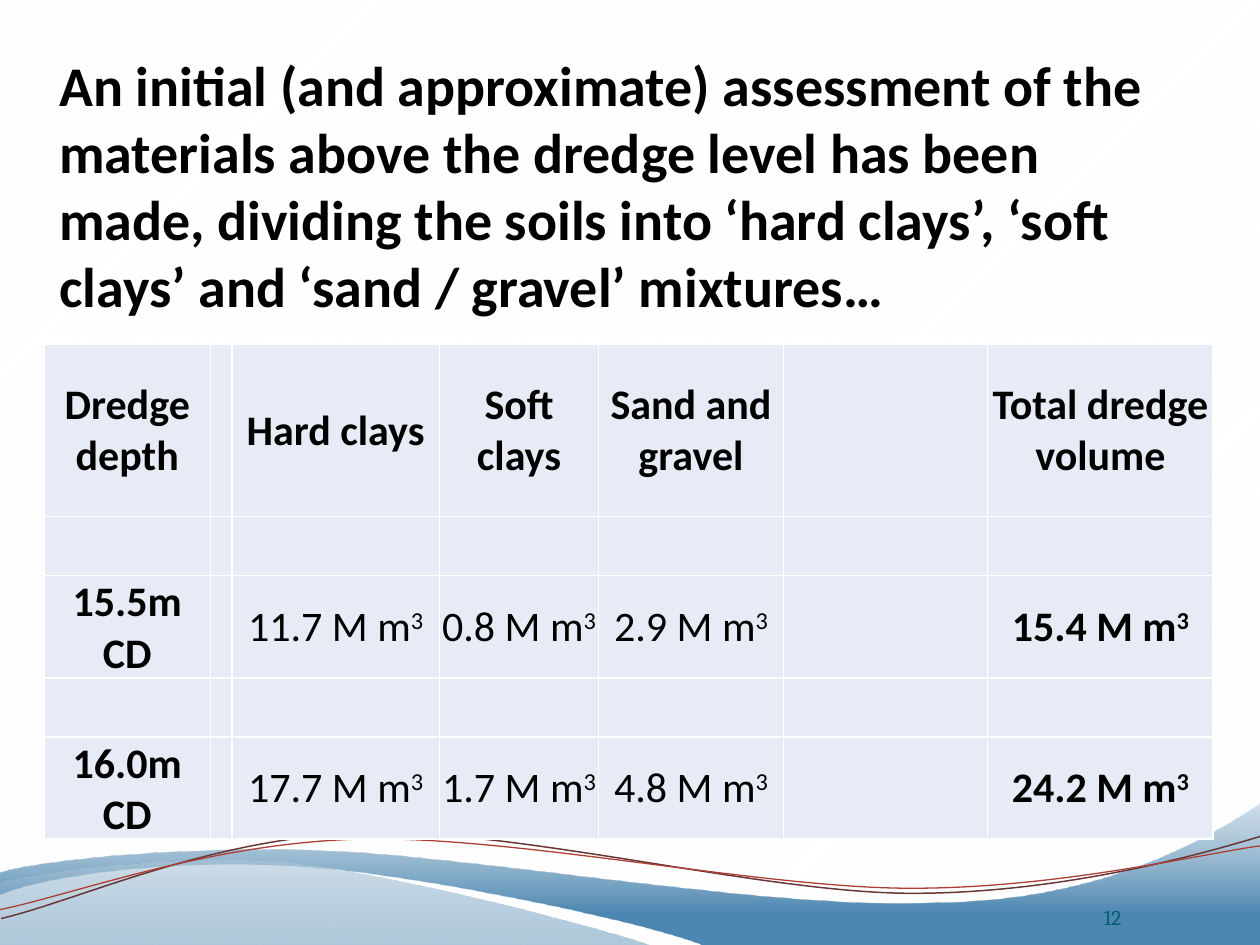
from dataclasses import dataclass
from typing import NamedTuple

from lxml.etree import Element, SubElement
from pptx import Presentation
from pptx.dml.color import RGBColor
from pptx.enum.dml import MSO_PATTERN
from pptx.enum.text import MSO_ANCHOR, PP_ALIGN
from pptx.oxml.ns import qn
from pptx.util import Inches, Pt


class Box(NamedTuple):
    """A region of the slide in inches."""
    left: float
    top: float
    width: float
    height: float

    def lengths(self):
        """Return the four sides as lengths."""
        return [Inches(side) for side in self]


@dataclass(frozen=True)
class Theme:
    """Colours, fonts and type sizes of the slide."""
    text: str = "000000"
    number: str = "045D75"
    cell: str = "E7EBF5"
    border: str = "FFFFFF"
    paper: str = "FFFFFF"
    stripe: str = "F9F9F9"
    wave_dark: str = "4C87B1"
    wave_light: str = "ACC5D8"
    brown: str = "683738"
    red: str = "AD3E34"
    body_font: str = "Calibri"
    number_font: str = "Cambria"
    title_size: int = 32
    table_size: int = 24
    number_size: int = 12


THEME = Theme()

BACK_WAVE = [
    (10, 1.21), (5.6, 1.21),
    (5.24, 1.04, 3.35, 0.64, 2.42, 0.58), (1.48, 0.51, 0.42, 0.63, 0, 0.8),
    (0, 0.71, -0.01, 0.72, -0.01, 0.63), (0.17, 0.55, 1.3, 0.41, 2.54, 0.45),
    (3.78, 0.49, 6.18, 0.93, 7.43, 0.86), (8.71, 0.85, 9.54, 0.38, 10.01, 0.07),
    (10.01, 0.45, 10, 0.83, 10, 1.21),
]
FRONT_WAVE = [
    (5.2, 1.21), (4.89, 1.09, 3.17, 0.63, 2.3, 0.55),
    (1.43, 0.47, 0.36, 0.61, -0.02, 0.71), (-0.02, 0.88, -0.01, 1.04, -0.01, 1.21),
    (5.2, 1.21),
]
BROWN_LINE = [
    (10.03, 0.33), (9.54, 0.48, 8.43, 0.79, 7.24, 0.79),
    (6.05, 0.79, 4.1, 0.27, 2.89, 0.31), (1.69, 0.34, 0.61, 0.85, 0.01, 0.99),
]
RED_LINE = [
    (10.03, 0.41), (9.56, 0.47, 8.38, 0.76, 7.18, 0.75),
    (5.99, 0.74, 4.05, 0.33, 2.86, 0.36), (1.66, 0.39, 0.59, 0.8, 0, 0.92),
]

TITLE = (
    "An initial (and approximate) assessment of the materials above the dredge "
    "level has been made, dividing the soils into ‘hard clays’, ‘soft clays’ "
    "and ‘sand / gravel’ mixtures…"
)
COLUMN_WIDTHS = [1.32, 0.17, 1.65, 1.26, 1.47, 1.62, 1.79]
ROW_HEIGHTS = [1.37] + [0.47] * 4
VOLUME_UNIT = " M m"
VOLUME_COLUMNS = (2, 3, 4, 6)
DREDGE_ROWS = {
    0: ["Dredge depth", "", "Hard clays", "Soft clays", "Sand and gravel", "", "Total dredge volume"],
    2: ["15.5m CD", "", "11.7", "0.8", "2.9", "", "15.4"],
    4: ["16.0m CD", "", "17.7", "1.7", "4.8", "", "24.2"],
}


def add_run(paragraph, text, size, color, font_name, bold=False):
    """Append a formatted run and return it."""
    run = paragraph.add_run()
    run.text = text
    run.font.name, run.font.size, run.font.bold = font_name, Pt(size), bold
    run.font.color.rgb = RGBColor.from_string(color)
    return run


def add_curve(shapes, box, segments, closed):
    """Draw straight and cubic segments measured from the box corner."""
    def place(x, y):
        """Return a point of the box as slide lengths."""
        return Inches(box.left + x), Inches(box.top + y)

    points = [place(*segment[-2:]) for segment in segments]
    builder = shapes.build_freeform(*points[0])
    builder.add_line_segments(points[1:], close=closed)
    shape = builder.convert_to_shape()
    shape.shadow.inherit = False
    steps = list(shape.element.spPr.iter(qn("a:lnTo")))
    for step, segment in zip(steps, segments[1:]):
        if len(segment) == 2:
            continue
        curve = Element(qn("a:cubicBezTo"))
        for index in (0, 2, 4):
            x, y = place(*segment[index:index + 2])
            SubElement(curve, qn("a:pt"), x=str(x - shape.left), y=str(y - shape.top))
        step.getparent().replace(step, curve)
    return shape


def add_wave(shapes, box, segments, stops):
    """Draw a wave fading upwards through (position, colour, opacity) stops."""
    shape = add_curve(shapes, box, segments, True)
    shape.line.fill.background()
    shape.fill.gradient()
    shape.fill.gradient_angle = 90
    for stop, (position, color, _) in zip(shape.fill.gradient_stops, stops):
        stop.position = position
        stop.color.rgb = RGBColor.from_string(color)
    for element, (_, _, opacity) in zip(shape.element.spPr.iter(qn("a:srgbClr")), stops):
        SubElement(element, qn("a:alpha"), val=str(opacity * 1000))


def add_footer_waves(slide, box):
    """Draw the two waves and the pair of thin lines across the foot."""
    dark, light = THEME.wave_dark, THEME.wave_light
    add_wave(slide.shapes, box, BACK_WAVE, [(0.23, dark, 100), (1, light, 55)])
    add_wave(slide.shapes, box, FRONT_WAVE, [(0, dark, 45), (1, light, 60)])
    group = slide.shapes.add_group_shape()
    for segments, color, width in ((BROWN_LINE, THEME.brown, 0.85), (RED_LINE, THEME.red, 0.75)):
        shape = add_curve(group.shapes, box, segments, False)
        shape.fill.background()
        shape.line.color.rgb = RGBColor.from_string(color)
        shape.line.width = Pt(width)


def add_text(slide, box, top_inset=0, anchor=MSO_ANCHOR.TOP):
    """Add a wrapping text box and return its first paragraph."""
    frame = slide.shapes.add_textbox(*box.lengths()).text_frame
    frame.word_wrap = True
    frame.vertical_anchor = anchor
    frame.margin_left = frame.margin_right = frame.margin_bottom = 0
    frame.margin_top = Inches(top_inset)
    return frame.paragraphs[0]


def add_title(slide, box):
    """Write the opening statement."""
    add_run(add_text(slide, box, 0.05), TITLE, THEME.title_size, THEME.text, THEME.body_font, True)


def add_slide_number(slide, box):
    """Write the slide number at the lower right."""
    paragraph = add_text(slide, box, anchor=MSO_ANCHOR.BOTTOM)
    paragraph.alignment = PP_ALIGN.RIGHT
    add_run(paragraph, "12", THEME.number_size, THEME.number, THEME.number_font)


def style_cell(cell):
    """Give a cell its margins, borders and fill."""
    cell.margin_left = cell.margin_right = cell.margin_top = Inches(0.01)
    cell.margin_bottom = 0
    properties = cell._tc.get_or_add_tcPr()
    for side in ("lnL", "lnR", "lnT", "lnB"):
        line = SubElement(properties, qn(f"a:{side}"), w=str(Pt(1)))
        fill = SubElement(line, qn("a:solidFill"))
        SubElement(fill, qn("a:srgbClr"), val=THEME.border)
    cell.fill.solid()
    cell.fill.fore_color.rgb = RGBColor.from_string(THEME.cell)


def write_cell(cell, text, is_volume, bold):
    """Centre a label, or a volume with its raised exponent, in a cell."""
    cell.vertical_anchor = MSO_ANCHOR.MIDDLE
    paragraph = cell.text_frame.paragraphs[0]
    paragraph.alignment = PP_ALIGN.CENTER
    style = (THEME.table_size, THEME.text, THEME.body_font, bold)
    add_run(paragraph, text + VOLUME_UNIT if is_volume else text, *style)
    if is_volume:
        exponent = add_run(paragraph, "3", *style)
        exponent.font._element.set("baseline", "30000")


def add_volume_table(slide, box):
    """Tabulate dredge volumes by depth and material."""
    frame = slide.shapes.add_table(len(ROW_HEIGHTS), len(COLUMN_WIDTHS), *box.lengths())
    table = frame.table
    table.first_row = table.horz_banding = False
    for column, width in zip(table.columns, COLUMN_WIDTHS):
        column.width = Inches(width)
    for row, height in zip(table.rows, ROW_HEIGHTS):
        row.height = Inches(height)
    frame.height = Inches(box.height)
    for cell in table.iter_cells():
        style_cell(cell)
    for row, texts in DREDGE_ROWS.items():
        for column, text in enumerate(texts):
            if text:
                is_volume = row > 0 and column in VOLUME_COLUMNS
                bold = row == 0 or column in (0, len(texts) - 1)
                write_cell(table.cell(row, column), text, is_volume, bold)


def main():
    """Build and save the dredge volume slide."""
    presentation = Presentation()
    presentation.slide_width, presentation.slide_height = Inches(10), Inches(7.5)
    slide = presentation.slides.add_slide(presentation.slide_layouts[6])
    background = slide.background.fill
    background.patterned()
    background.pattern = MSO_PATTERN.WIDE_UPWARD_DIAGONAL
    background.fore_color.rgb = RGBColor.from_string(THEME.stripe)
    background.back_color.rgb = RGBColor.from_string(THEME.paper)
    add_footer_waves(slide, Box(0, 6.3, 10, 1.2))
    add_title(slide, Box(0.47, 0.35, 8.94, 2.2))
    add_slide_number(slide, Box(8.07, 6.98, 0.83, 0.4))
    add_volume_table(slide, Box(0.35, 2.73, 9.29, 3.92))
    presentation.save("out.pptx")


if __name__ == "__main__":
    main()
